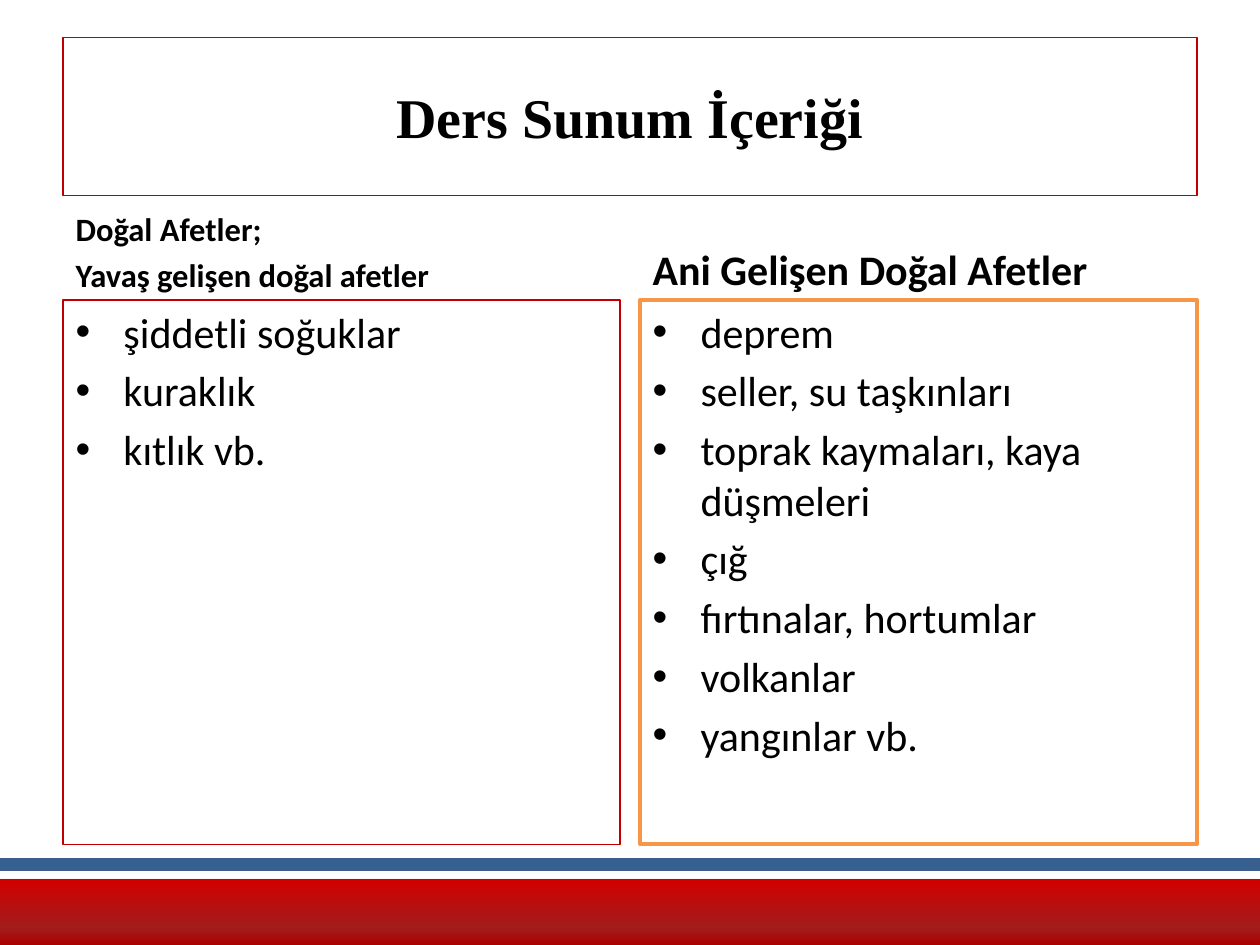
from copy import deepcopy

from lxml.etree import SubElement
from pptx import Presentation
from pptx.dml.color import RGBColor
from pptx.enum.shapes import MSO_SHAPE
from pptx.enum.text import MSO_ANCHOR, MSO_AUTO_SIZE, PP_ALIGN
from pptx.oxml.ns import qn
from pptx.util import Inches, Pt

# Content
TITLE = "Ders Sunum İçeriği"
COLUMNS = [
    {
        "heading": ["Doğal Afetler;", "Yavaş gelişen doğal afetler"],
        "heading_size": 18.6,
        "items": ["şiddetli soğuklar", "kuraklık", "kıtlık vb."],
        "fill": None,
        "line": ("C00000", 0.75),
    },
    {
        "heading": ["Ani Gelişen Doğal Afetler"],
        "heading_size": 24,
        "items": [
            "deprem",
            "seller, su taşkınları",
            "toprak kaymaları, kaya düşmeleri",
            "çığ",
            "fırtınalar, hortumlar",
            "volkanlar",
            "yangınlar vb.",
        ],
        "fill": "FFFFFF",
        "line": ("F79646", 2),
    },
]
FOOTER_STOPS = [(0, "D10000"), (0.74, "A21C1C"), (1, "AB0000")]

# Layout in inches
MARGIN, COLUMN_WIDTH, COLUMN_GAP = 0.5, 4.42, 0.16
HEADING_TOP, HEADING_HEIGHT = 1.68, 0.7
LIST_TOP, LIST_HEIGHT = HEADING_TOP + HEADING_HEIGHT, 4.32
BULLET_INDENT = 0.38


def color(hex_text):
    return RGBColor.from_string(hex_text)


def place(box, left, top, width, height):
    box.left, box.top = Inches(left), Inches(top)
    box.width, box.height = Inches(width), Inches(height)


def outline(box, line):
    box.line.color.rgb = color(line[0])
    box.line.width = Pt(line[1])


def add_bullet(para):
    properties = para._p.get_or_add_pPr()
    properties.set("marL", str(Inches(BULLET_INDENT)))
    properties.set("indent", str(-Inches(BULLET_INDENT)))
    SubElement(properties, qn("a:buFont"), typeface="Arial")
    SubElement(properties, qn("a:buChar"), char="•")


def write(box, lines, anchor, size, font="Calibri", bold=False,
          align=PP_ALIGN.LEFT, bullets=False):
    frame = box.text_frame
    frame.word_wrap = True
    frame.auto_size = MSO_AUTO_SIZE.NONE
    frame.vertical_anchor = anchor
    font_format = {"name": font, "size": Pt(size), "bold": bold}
    for index, line in enumerate(lines):
        para = frame.paragraphs[0] if index == 0 else frame.add_paragraph()
        if bullets:
            add_bullet(para)
        para.alignment = align
        para.space_before = Pt(size * 0.2 if index else 0)
        span = para.add_run()
        span.text = line
        for name, value in font_format.items():
            setattr(span.font, name, value)
        span.font.color.rgb = color("000000")


def add_bar(slide, left, top, width, height):
    bar = slide.shapes.add_shape(
        MSO_SHAPE.RECTANGLE, *map(Inches, (left, top, width, height)))
    bar.shadow.inherit = False
    return bar


def fill_gradient(bar, stops):
    bar.fill.gradient()
    bar.fill.gradient_angle = 270
    stop_list = bar.element.spPr.find(".//" + qn("a:gsLst"))
    while len(stop_list) < len(stops):
        stop_list.append(deepcopy(stop_list[-1]))
    for stop, (position, hex_text) in zip(bar.fill.gradient_stops, stops):
        stop.position = position
        stop.color.rgb = color(hex_text)


def add_shadow(bar):
    effects = bar.element.spPr.find(qn("a:effectLst"))
    shadow = SubElement(effects, qn("a:outerShdw"), blurRad=str(Pt(3.1)),
                        dist=str(Pt(1.8)), dir="5400000", rotWithShape="0")
    tint = SubElement(shadow, qn("a:srgbClr"), val="000000")
    SubElement(tint, qn("a:alpha"), val="35000")


def main():
    deck = Presentation()
    deck.slide_width, deck.slide_height = Inches(10), Inches(7.5)
    comparison_layout = deck.slide_layouts[4]
    slide = deck.slides.add_slide(comparison_layout)

    # Footer bars
    blue_bar = add_bar(slide, -0.04, 6.82, 10.04, 0.08)
    blue_bar.fill.solid()
    blue_bar.fill.fore_color.rgb = color("376092")
    outline(blue_bar, ("3A5F8C", 2))
    red_bar = add_bar(slide, -0.04, 6.98, 10.04, 0.52)
    fill_gradient(red_bar, FOOTER_STOPS)
    red_bar.line.fill.background()
    add_shadow(red_bar)

    # Title
    title = slide.shapes.title
    place(title, MARGIN, 0.3, 9, 1.25)
    outline(title, ("C00000", 0.75))
    write(title, [TITLE], MSO_ANCHOR.MIDDLE, 32, "Times New Roman", True,
          PP_ALIGN.CENTER)

    # Two columns, each a heading above a list
    for index, column in enumerate(COLUMNS):
        left = MARGIN + index * (COLUMN_WIDTH + COLUMN_GAP)
        heading = slide.placeholders[1 + 2 * index]
        place(heading, left, HEADING_TOP, COLUMN_WIDTH, HEADING_HEIGHT)
        write(heading, column["heading"], MSO_ANCHOR.BOTTOM,
              column["heading_size"], bold=True)

        body = slide.placeholders[2 + 2 * index]
        place(body, left, LIST_TOP, COLUMN_WIDTH, LIST_HEIGHT)
        if column["fill"]:
            body.fill.solid()
            body.fill.fore_color.rgb = color(column["fill"])
        outline(body, column["line"])
        write(body, column["items"], MSO_ANCHOR.TOP, 24, bullets=True)

    deck.save("out.pptx")


if __name__ == "__main__":
    main()
